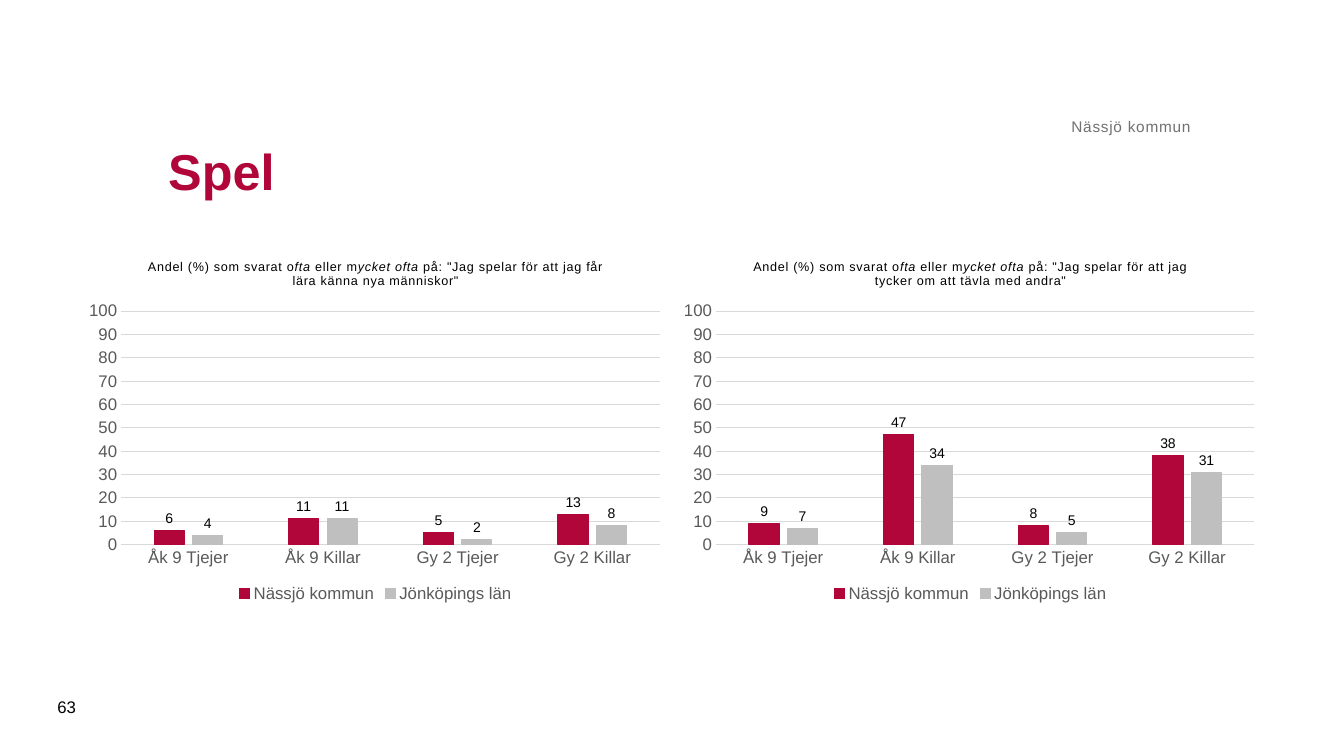
from dataclasses import dataclass

from lxml.etree import SubElement
from pptx import Presentation
from pptx.chart.data import CategoryChartData
from pptx.dml.color import RGBColor
from pptx.enum.chart import (XL_CHART_TYPE, XL_LABEL_POSITION,
                             XL_LEGEND_POSITION, XL_TICK_MARK)
from pptx.enum.text import MSO_ANCHOR, PP_ALIGN
from pptx.oxml.ns import qn
from pptx.util import Inches, Pt


@dataclass(frozen=True)
class Theme:
    font: str = "Arial"
    red: str = "B1063A"
    silver: str = "BFBFBF"
    grid: str = "D9D9D9"
    axis_text: str = "595959"
    grey: str = "717171"
    black: str = "000000"
    heading: float = 36
    body: float = 12
    source: float = 11
    label: float = 10
    caption: float = 9
    hairline: float = 0.75
    spacing: int = 50  # hundredths of a point


class SlideBuilder:
    def __init__(self, prs, theme):
        self.theme = theme
        self.s = prs.slides.add_slide(prs.slide_layouts[6])

    def style(self, font, size, color, **extra):
        formats = {"name": self.theme.font, "size": Pt(size), "bold": False, **extra}
        for name, value in formats.items():
            setattr(font, name, value)
        font.color.rgb = RGBColor.from_string(color)

    def line(self, line, color):
        line.color.rgb = RGBColor.from_string(color)
        line.width = Pt(self.theme.hairline)

    def track(self, r):
        r.font._element.set("spc", str(self.theme.spacing))

    def text(self, box, text, size, color, anchor=MSO_ANCHOR.MIDDLE,
             align=PP_ALIGN.LEFT, inset=None, tracked=False, **extra):
        tf = self.s.shapes.add_textbox(*map(Inches, box)).text_frame
        formats = {"word_wrap": True, "vertical_anchor": anchor}
        if inset is not None:
            sides = ("left", "top", "right", "bottom")
            formats.update({f"margin_{side}": Inches(inset) for side in sides})
        for name, value in formats.items():
            setattr(tf, name, value)
        p = tf.paragraphs[0]
        p.alignment = align
        r = p.add_run()
        r.text = text
        self.style(r.font, size, color, **extra)
        if tracked:
            self.track(r)

    def chart(self, box, title, categories, series):
        t = self.theme
        data = CategoryChartData(number_format="0")
        data.categories = categories
        for name, values, _ in series:
            data.add_series(name, values)
        chart = self.s.shapes.add_chart(
            XL_CHART_TYPE.COLUMN_CLUSTERED, *map(Inches, box), data).chart
        self.style(chart.font, t.label, t.black)
        self.chart_title(chart, title)
        self.axes(chart)

        # Columns and their labels
        plot = chart.plots[0]
        for name, value in {"gap_width": 219, "overlap": -27,
                            "vary_by_categories": False}.items():
            setattr(plot, name, value)
        for ser, (_, _, color) in zip(plot.series, series):
            ser.format.fill.solid()
            ser.format.fill.fore_color.rgb = RGBColor.from_string(color)
            self.line(ser.format.line, color)
            labels = ser.data_labels
            for name, value in {"show_value": True,
                                "position": XL_LABEL_POSITION.OUTSIDE_END,
                                "number_format": "#,##0;#,##0",
                                "number_format_is_linked": False}.items():
                setattr(labels, name, value)
            self.style(labels.font, t.label, t.black)

        # Legend
        chart.has_legend = True
        chart.legend.position = XL_LEGEND_POSITION.BOTTOM
        chart.legend.include_in_layout = False
        self.style(chart.legend.font, t.body, t.axis_text)
        self.plot_layout(chart)

    def chart_title(self, chart, runs):
        chart.has_title = True
        p = chart.chart_title.text_frame.paragraphs[0]
        p.alignment = PP_ALIGN.CENTER
        for text, italic in runs:
            r = p.add_run()
            r.text = text
            self.style(r.font, self.theme.caption, self.theme.black, italic=italic)
            self.track(r)
        chart.chart_title.include_in_layout = False

    def axes(self, chart):
        t = self.theme
        cat, val = chart.category_axis, chart.value_axis
        for axis in (cat, val):
            axis.major_tick_mark = axis.minor_tick_mark = XL_TICK_MARK.NONE
            self.style(axis.tick_labels.font, t.body, t.axis_text)
        self.line(cat.format.line, t.grid)
        val.format.line.fill.background()
        for name, value in {"minimum_scale": 0, "maximum_scale": 100,
                            "major_unit": 10, "has_major_gridlines": True}.items():
            setattr(val, name, value)
        self.line(val.major_gridlines.format.line, t.grid)
        val.tick_labels.number_format = "#,##0;#,##0"
        val.tick_labels.number_format_is_linked = False

    def plot_layout(self, chart):
        area = chart._chartSpace.chart.plotArea
        for old in area.findall(qn("c:layout")):
            area.remove(old)
        layout = SubElement(area, qn("c:layout"))
        area.insert(0, layout)
        manual = SubElement(layout, qn("c:manualLayout"))
        for tag, value in (("layoutTarget", "inner"), ("xMode", "edge"),
                           ("yMode", "edge"), ("x", 0.07), ("y", 0.19),
                           ("w", 0.91), ("h", 0.64)):
            SubElement(manual, qn(f"c:{tag}")).set("val", str(value))


def question(statement):
    return [("Andel (%) som svarat o", False), ("fta", True), (" eller m", False),
            ("ycket ofta", True), (f" på: \"{statement}\"", False)]


def main():
    prs = Presentation()
    prs.slide_width, prs.slide_height = Inches(13.33), Inches(7.5)
    theme = Theme()
    slide = SlideBuilder(prs, theme)

    # Charts side by side
    categories = [f"{grade} {group}" for grade in ("Åk 9", "Gy 2")
                  for group in ("Tjejer", "Killar")]
    charts = [
        ("Jag spelar för att jag får lära känna nya människor",
         (6, 11, 5, 13), (4, 11, 2, 8)),
        ("Jag spelar för att jag tycker om att tävla med andra",
         (9, 47, 8, 38), (7, 34, 5, 31)),
    ]
    for i, (statement, municipality, county) in enumerate(charts):
        slide.chart((0.79 + i * 5.9, 2.4, 5.87, 3.62), question(statement), categories,
                    [("Nässjö kommun", municipality, theme.red),
                     ("Jönköpings län", county, theme.silver)])

    # Heading, municipality and page number
    slide.text((1.57, 0.98, 10.24, 1.42), "Spel", theme.heading, theme.red, bold=True)
    slide.text((1.57, 0.62, 10.24, 0.73), "Nässjö kommun", theme.source, theme.grey,
               anchor=MSO_ANCHOR.BOTTOM, align=PP_ALIGN.RIGHT, inset=0, tracked=True)
    slide.text((0.47, 6.81, 0.57, 0.4), "63", theme.body, theme.black)

    prs.save("out.pptx")


if __name__ == "__main__":
    main()
